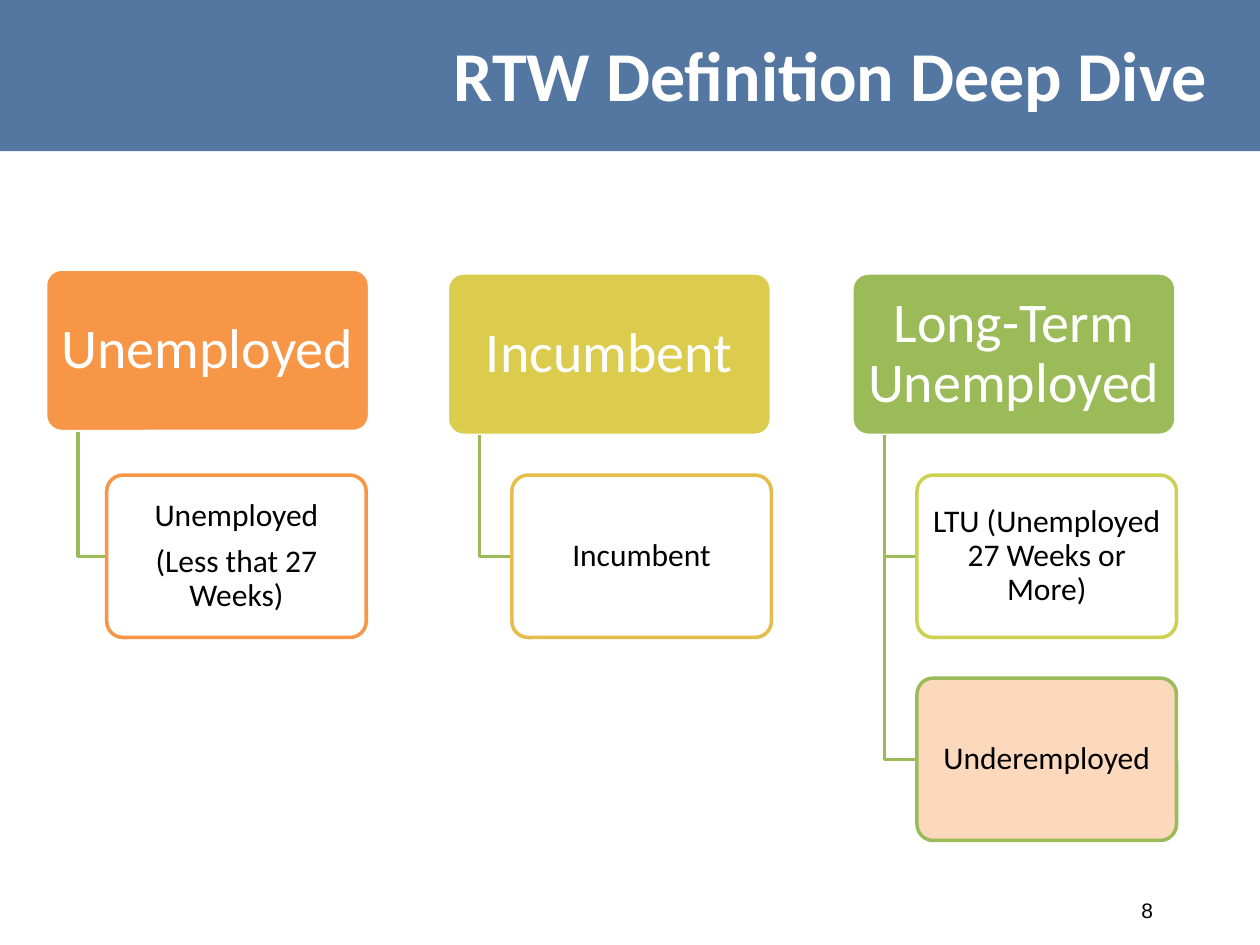
from lxml import etree
from pptx import Presentation
from pptx.dml.color import RGBColor
from pptx.enum.shapes import MSO_SHAPE
from pptx.enum.text import MSO_ANCHOR, PP_ALIGN
from pptx.oxml.ns import qn
from pptx.util import Pt

RECTANGLE, ROUNDED = MSO_SHAPE.RECTANGLE, MSO_SHAPE.ROUNDED_RECTANGLE
MIDDLE = MSO_ANCHOR.MIDDLE
LEFT, CENTER, RIGHT = PP_ALIGN.LEFT, PP_ALIGN.CENTER, PP_ALIGN.RIGHT

WHITE = RGBColor(0xFF, 0xFF, 0xFF)
BLACK = RGBColor(0x00, 0x00, 0x00)
BLUE = RGBColor(0x37, 0x60, 0x92)
ORANGE = RGBColor(0xF7, 0x96, 0x46)
GOLD = RGBColor(0xE5, 0xBD, 0x4A)
YELLOW = RGBColor(0xDC, 0xCC, 0x4D)
LIME = RGBColor(0xCD, 0xD1, 0x50)
GREEN = RGBColor(0x9B, 0xBB, 0x59)
PEACH = RGBColor(0xFC, 0xD5, 0xB5)

# Sizes in points shared by the three columns
HEADER_WIDTH, BOX_HEIGHT = 185.2, 92.8
CHILD_WIDTH, CHILD_TOP, CHILD_PITCH = 148.3, 271.5, 116

# Header text, fill, left, top, left of children,
# then children as (paragraphs, fill, outline)
COLUMNS = [
    ("Unemployed", ORANGE, 26, 153.8, 61,
     [(["Unemployed", "(Less that 27 Weeks)"], WHITE, ORANGE)]),
    ("Incumbent", YELLOW, 255.6, 156, 292.5,
     [(["Incumbent"], WHITE, GOLD)]),
    ("Long-Term Unemployed", GREEN, 486.8, 156, 524,
     [(["LTU (Unemployed 27 Weeks or More)"], WHITE, LIME),
      (["Underemployed"], PEACH, GREEN)]),
]


def set_fill(shape, color, opacity=100):
    shape.fill.solid()
    shape.fill.fore_color.rgb = color
    if opacity < 100:
        tint = shape.fill._xPr.find(f".//{qn('a:srgbClr')}")
        etree.SubElement(tint, qn("a:alpha"), val=str(opacity * 1000))


def write(frame, paragraphs, size, color, align, font="Calibri", bold=False):
    frame.word_wrap = True
    frame.vertical_anchor = MIDDLE
    frame.text = "\n".join(paragraphs)
    for paragraph in frame.paragraphs:
        paragraph.alignment = align
        paragraph.font.name = font
        paragraph.font.size = Pt(size)
        paragraph.font.bold = bold
        paragraph.font.color.rgb = color


def add_title_band(slide, left, top, width, height):
    band = slide.shapes.add_shape(RECTANGLE, Pt(left), Pt(top), Pt(width), Pt(height))
    band.shadow.inherit = False
    set_fill(band, BLUE, 85)
    band.line.fill.background()

    # The title sits in front of the band
    title = slide.shapes.title
    title.element.addprevious(band.element)
    title.left, title.top = Pt(left + 252), Pt(top)
    title.width, title.height = Pt(width - 252), Pt(height - 2)
    write(title.text_frame, ["RTW Definition Deep Dive"], 40, WHITE, LEFT, bold=True)


def add_box(slide, left, top, width, paragraphs, size, color, fill, outline, opacity=100):
    box = slide.shapes.add_shape(ROUNDED, Pt(left), Pt(top), Pt(width), Pt(BOX_HEIGHT))
    box.adjustments[0] = 0.1
    box.shadow.inherit = False
    set_fill(box, fill, opacity)
    box.line.color.rgb = outline
    box.line.width = Pt(2)
    frame = box.text_frame
    frame.margin_left = frame.margin_right = Pt(size * 0.15)
    frame.margin_top = frame.margin_bottom = Pt(size * 0.1)
    write(frame, paragraphs, size, color, CENTER)
    for paragraph in frame.paragraphs:
        paragraph.line_spacing = 0.9
        paragraph.space_after = Pt(size * 0.35)


def add_elbow(slide, left, top, right, bottom):
    path = slide.shapes.build_freeform(Pt(left), Pt(top))
    path.add_line_segments([(Pt(left), Pt(bottom)), (Pt(right), Pt(bottom))], close=False)
    elbow = path.convert_to_shape()
    elbow.shadow.inherit = False
    elbow.fill.background()
    elbow.line.color.rgb = GREEN
    elbow.line.width = Pt(2)


def add_column(slide, header, fill, left, top, child_left, children):
    add_box(slide, left, top, HEADER_WIDTH, [header], 32, WHITE, fill, WHITE)
    for row, (paragraphs, child_fill, outline) in enumerate(children):
        child_top = CHILD_TOP + row * CHILD_PITCH
        add_elbow(slide, left + HEADER_WIDTH / 10, top + BOX_HEIGHT,
                  child_left, child_top + BOX_HEIGHT / 2)
        add_box(slide, child_left, child_top, CHILD_WIDTH, paragraphs, 18, BLACK,
                child_fill, outline, 90)


def add_page_number(slide, left, top, width, height):
    number = slide.shapes.add_textbox(Pt(left), Pt(top), Pt(width), Pt(height))
    write(number.text_frame, ["8"], 12, BLACK, RIGHT, font="Arial")


def main():
    prs = Presentation()
    prs.slide_width, prs.slide_height = Pt(720), Pt(540)
    title_only = prs.slide_layouts[5]
    slide = prs.slides.add_slide(title_only)
    add_title_band(slide, 0, 0, 720, 86.4)
    for column in COLUMNS:
        add_column(slide, *column)
    add_page_number(slide, 498, 505.5, 168, 28.8)
    prs.save("out.pptx")


if __name__ == "__main__":
    main()
